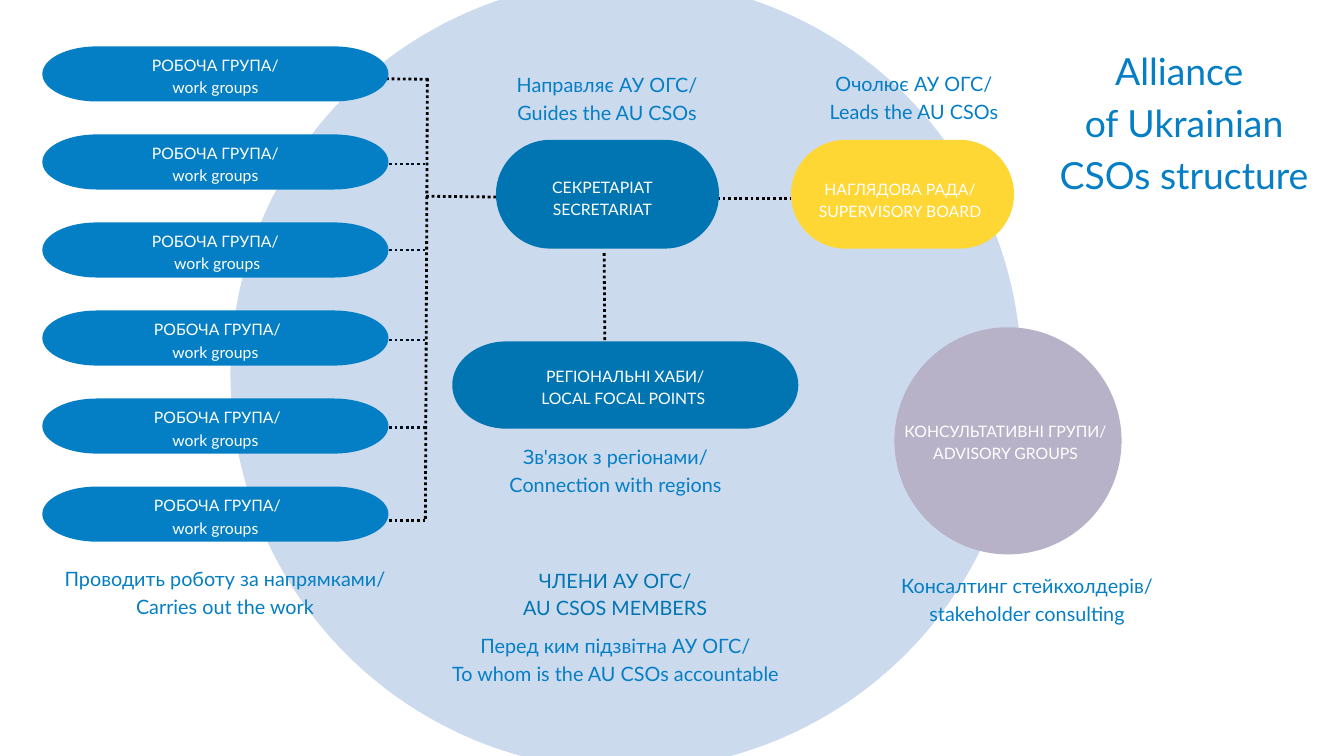
"""Build the Alliance of Ukrainian CSOs structure slide."""
from lxml.etree import SubElement
from pptx import Presentation
from pptx.dml.color import RGBColor
from pptx.enum.dml import MSO_LINE
from pptx.enum.shapes import MSO_CONNECTOR, MSO_SHAPE
from pptx.enum.text import MSO_ANCHOR, MSO_AUTO_SIZE, PP_ALIGN
from pptx.oxml.ns import qn
from pptx.util import Inches, Pt

BLACK = RGBColor(0x00, 0x00, 0x00)
WHITE = RGBColor(0xFF, 0xFF, 0xFF)
BLUE = RGBColor(0x04, 0x7E, 0xC4)
DEEP_BLUE = RGBColor(0x00, 0x75, 0xB2)
NAVY = RGBColor(0x00, 0x4A, 0xAD)
YELLOW = RGBColor(0xFF, 0xD7, 0x34)
LILAC = RGBColor(0xB7, 0xB2, 0xC7)

CORNER_WIDTH = 0.81
ARC_HANDLE = 0.55
GROUP_TOP = 0.69
GROUP_PITCH = 1.31


def write_text(shape, lines, size, spacing, color, **frame_format):
    frame = shape.text_frame
    values = {
        "margin_left": 0, "margin_top": 0, "margin_right": 0, "margin_bottom": 0,
        "word_wrap": True, "auto_size": MSO_AUTO_SIZE.NONE,
        "vertical_anchor": MSO_ANCHOR.TOP,
    }
    for name, value in (values | frame_format).items():
        setattr(frame, name, value)
    frame.text = "\n".join(lines)
    for paragraph in frame.paragraphs:
        for name, value in {"alignment": PP_ALIGN.CENTER, "line_spacing": Pt(spacing),
                            "space_before": Pt(0)}.items():
            setattr(paragraph, name, value)
        font = paragraph.runs[0].font
        for name, value in {"name": "Lato", "size": Pt(size)}.items():
            setattr(font, name, value)
        font.color.rgb = color


def add_dotted_lines(shapes, segments):
    for segment in segments:
        connector = shapes.add_connector(MSO_CONNECTOR.STRAIGHT, *map(Inches, segment))
        for name, value in {"width": Pt(3), "dash_style": MSO_LINE.ROUND_DOT}.items():
            setattr(connector.line, name, value)
        connector.line.color.rgb = BLACK
        SubElement(connector.element.spPr, qn("a:effectLst"))


presentation = Presentation()
presentation.slide_width = Inches(20)
presentation.slide_height = Inches(11.25)
slide = presentation.slides.add_slide(presentation.slide_layouts[5])
shapes = slide.shapes

title = shapes.title
for name, value in {"left": 15.71, "top": 0.6, "width": 3.82, "height": 3.06}.items():
    setattr(title, name, Inches(value))
write_text(title, ["Alliance ", "of Ukrainian CSOs structure"], 40, 56, BLUE)

add_dotted_lines(shapes, [(4.62, y, 6.34, y) for y in (6.36, 2.44, 3.72, 5.06)])

members_circle = shapes.add_shape(
    MSO_SHAPE.OVAL, Inches(3.43), Inches(-0.31), Inches(11.77), Inches(11.77))
advisory_circle = shapes.add_shape(
    MSO_SHAPE.OVAL, Inches(13.31), Inches(4.87), Inches(3.38), Inches(3.38))
for circle, color in ((members_circle, NAVY), (advisory_circle, LILAC)):
    circle.shadow.inherit = False
    circle.fill.solid()
    circle.fill.fore_color.rgb = color
    circle.line.fill.background()
members_color = next(members_circle.element.spPr.iter(qn("a:srgbClr")))
SubElement(members_color, qn("a:alpha")).set("val", "20000")
write_text(advisory_circle, ["КОНСУЛЬТАТИВНІ ГРУПИ/", "ADVISORY GROUPS"], 16.9, 23.7, WHITE,
           word_wrap=False, vertical_anchor=MSO_ANCHOR.MIDDLE, margin_right=Inches(0.07))

add_dotted_lines(shapes, [
    (9, 5.06, 8.99, 3.73),
    (4.62, 7.75, 6.34, 7.75),
    (4.66, 1.16, 6.38, 1.18),
    (6.34, 2.92, 8.06, 2.94),
    (10.67, 2.95, 12.39, 2.95),
    (6.33, 7.72, 6.36, 1.16),
])

pills = [
    (7.38, 2.08, 3.32, 1.62, DEEP_BLUE, ["СЕКРЕТАРІАТ", "SECRETARIAT"], 0.06, 0.15),
    (11.77, 2.08, 3.32, 1.62, YELLOW, ["НАГЛЯДОВА РАДА/", "SUPERVISORY BOARD"], 0.13, 0.07),
    (6.73, 5.08, 5.15, 1.3, DEEP_BLUE, ["РЕГІОНАЛЬНІ ХАБИ/", "LOCAL FOCAL POINTS "], 0.03, 0),
]
group_labels = [
    *[["РОБОЧА ГРУПА/", "work groups"]] * 2,
    ["РОБОЧА ГРУПА/", " work groups"],
    *[[" РОБОЧА ГРУПА/", "work groups"]] * 3,
]
pills += [
    (0.63, GROUP_TOP + GROUP_PITCH * row, 5.15, 0.82, BLUE, lines, 0.03, 0)
    for row, lines in enumerate(group_labels)
]
for left, top, width, height, color, lines, margin_top, margin_right in pills:
    half_width, half_height = width / 2, height / 2
    straight = half_width - CORNER_WIDTH
    handle_x = straight + CORNER_WIDTH * ARC_HANDLE
    handle_y = half_height * ARC_HANDLE
    right_side = [
        (straight, -half_height), (handle_x, -half_height), (half_width, -handle_y),
        (half_width, 0), (half_width, handle_y), (handle_x, half_height),
        (straight, half_height),
    ]
    outline = [
        (Inches(left + half_width + side * x), Inches(top + half_height + side * y))
        for side in (1, -1) for x, y in right_side
    ]
    builder = shapes.build_freeform(*outline[0])
    builder.add_line_segments(outline[1:], close=True)
    pill = builder.convert_to_shape()
    outline_path = next(pill.element.spPr.iter(qn("a:path")))
    segments = outline_path.findall(qn("a:lnTo"))
    for first in (0, 3, 7, 10):
        curve, *followers = segments[first:first + 3]
        curve.tag = qn("a:cubicBezTo")
        for follower in followers:
            curve.append(follower[0])
            outline_path.remove(follower)
    pill.shadow.inherit = False
    pill.fill.solid()
    pill.fill.fore_color.rgb = color
    pill.line.fill.background()
    write_text(pill, lines, 16.9, 23.7, WHITE, word_wrap=False,
               vertical_anchor=MSO_ANCHOR.MIDDLE,
               margin_top=Inches(margin_top), margin_right=Inches(margin_right))

captions = [
    (7.58, 1.02, 2.91, BLUE, ["Направляє АУ ОГС/", "Guides the AU CSOs"]),
    (12.24, 1.01, 2.72, BLUE, ["Очолює АУ ОГС/", "Leads the AU CSOs"]),
    (0.63, 8.38, 5.44, BLUE, ["Проводить роботу за напрямками/", "Carries out the work"]),
    (6.1, 8.4, 6.11, DEEP_BLUE, ["ЧЛЕНИ АУ ОГС/", "AU CSOS MEMBERS"]),
    (7.42, 6.56, 3.48, BLUE, ["Зв'язок з регіонами/", "Сonnection with regions"]),
    (13.16, 8.48, 4.25, BLUE, ["Консалтинг стейкхолдерів/", "stakeholder consulting"]),
    (6.49, 9.37, 5.34, BLUE,
     ["Перед ким підзвітна АУ ОГС/", "To whom is the AU CSOs accountable"]),
]
for left, top, width, color, lines in captions:
    caption = shapes.add_textbox(Inches(left), Inches(top), Inches(width), Inches(0.8))
    write_text(caption, lines, 21.2, 29.7, color)

presentation.save("out.pptx")
